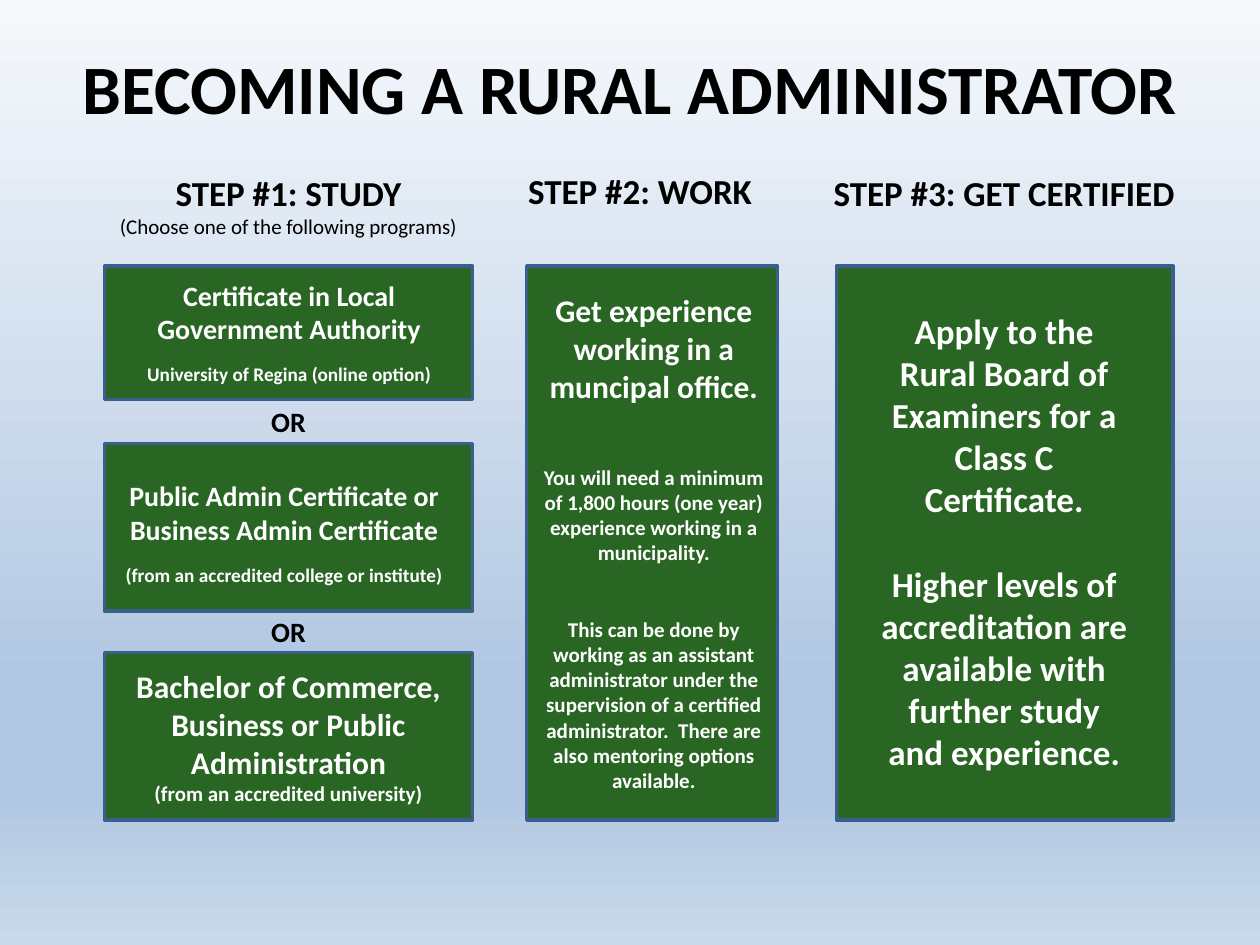
from lxml import etree
from pptx import Presentation
from pptx.dml.color import RGBColor
from pptx.enum.shapes import MSO_SHAPE
from pptx.enum.text import MSO_ANCHOR, PP_ALIGN
from pptx.oxml.ns import qn
from pptx.util import Inches, Pt

RECTANGLE = MSO_SHAPE.RECTANGLE
MIDDLE, TOP = MSO_ANCHOR.MIDDLE, MSO_ANCHOR.TOP
CENTER = PP_ALIGN.CENTER
BLACK, WHITE, GREEN, BLUE = "000000", "FFFFFF", "296624", "3A5F8C"
BACKGROUND_STOPS = [(0, "F6F9FC"), (74, "B0C6E1"), (83, "B0C6E1"), (100, "CAD9EB")]
HEADING_WIDTH = 2.92


def color(hex_string):
    """Turn a hex string into a colour."""
    return RGBColor.from_string(hex_string)


def write(frame, lines, ink, anchor=TOP, wrap=True):
    """Fill a text frame with (text, size, space before, bold) lines."""
    frame.word_wrap = wrap
    frame.vertical_anchor = anchor
    for index, (text, size, gap, bold) in enumerate(lines):
        para = frame.add_paragraph() if index else frame.paragraphs[0]
        para.alignment = CENTER
        para.space_before = Pt(gap)
        span = para.add_run()
        span.text = text
        font_format = {"name": "Calibri", "size": Pt(size), "bold": bold}
        for name, value in font_format.items():
            setattr(span.font, name, value)
        span.font.color.rgb = color(ink)


def add_text(page, box, lines, ink, wrap=True):
    """Add a text box at left, top, width, height."""
    label = page.shapes.add_textbox(*map(Inches, box))
    write(label.text_frame, lines, ink, wrap=wrap)


def add_panel(page, box):
    """Add a green panel with a blue outline."""
    panel = page.shapes.add_shape(RECTANGLE, *map(Inches, box))
    panel.shadow.inherit = False
    panel.fill.solid()
    panel.fill.fore_color.rgb = color(GREEN)
    panel.line.color.rgb = color(BLUE)
    panel.line.width = Pt(2)
    return panel


def add_background(page):
    """Paint the vertical background gradient."""
    fill = page.background.fill
    fill.gradient()
    fill.gradient_angle = 270
    stops = page.element.find(".//" + qn("a:gsLst"))
    for stop in list(stops):
        stops.remove(stop)
    for percent, tint in BACKGROUND_STOPS:
        stop = etree.SubElement(stops, qn("a:gs"), pos=str(percent * 1000))
        etree.SubElement(stop, qn("a:srgbClr"), val=tint)


def add_title(page, box):
    """Place and format the title placeholder."""
    title = page.shapes.title
    for name, value in zip(("left", "top", "width", "height"), box):
        setattr(title, name, Inches(value))
    write(title.text_frame, [("BECOMING A RURAL ADMINISTRATOR", 39.6, 0, True)], BLACK, MIDDLE)


def add_study(page, box):
    """Add step 1: three programs separated by OR."""
    left, top, width, height = box
    add_text(page, (left, top - 0.8, HEADING_WIDTH, 0.64), [
        ("STEP #1: STUDY", 20, 0, True),
        ("(Choose one of the following programs)", 12, 0, False)], BLACK)

    add_panel(page, (left, top, width, 1.06))
    add_text(page, (left + 0.07, top + 0.05, 2.79, 0.96), [
        ("Certificate in Local Government Authority", 16, 0, True),
        ("University of Regina (online option)", 11, 9.8, True)], WHITE)

    add_panel(page, (left, top + 1.41, width, 1.33))
    add_text(page, (left + 0.03, top + 1.64, 2.79, 0.96), [
        ("Public Admin Certificate or", 16, 0, True),
        ("Business Admin Certificate", 16, 0, True),
        ("(from an accredited college or institute)", 11, 9.8, True)], WHITE)

    degree = add_panel(page, (left, top + height - 1.33, width, 1.33))
    write(degree.text_frame, [
        ("Bachelor of Commerce, Business or Public Administration", 18, 0, True),
        ("(from an accredited university)", 12, 0, True)], WHITE, MIDDLE)

    for offset in (1.05, 2.72):
        add_text(page, (left + 1.22, top + offset, 0.48, 0.37),
                 [("OR", 16, 0, True)], BLACK, wrap=False)


def add_work(page, box):
    """Add step 2: work experience."""
    left, top, width, height = box
    add_text(page, (left - 0.56, top - 0.81, HEADING_WIDTH, 0.44),
             [("STEP #2: WORK", 20, 0, True)], BLACK)
    add_panel(page, box)
    add_text(page, (left + 0.03, top + 0.15, width - 0.03, height - 0.29), [
        ("Get experience working in a muncipal office.", 18, 0, True),
        ("You will need a minimum of 1,800 hours (one year) experience "
         "working in a municipality.", 12, 34.2, True),
        ("This can be done by working as an assistant administrator under the "
         "supervision of a certified administrator.  There are also mentoring "
         "options available.", 12, 29.3, True)], WHITE)


def add_certification(page, box):
    """Add step 3: certification."""
    left, top, width, height = box
    add_text(page, (left - 0.13, top - 0.8, HEADING_WIDTH, 0.44),
             [("STEP #3: GET CERTIFIED", 20, 0, True)], BLACK)
    add_panel(page, box)
    add_text(page, (left + 0.23, top + 0.3, 2.2, height - 0.6), [
        ("Apply to the Rural Board of Examiners for a Class C Certificate.", 20, 0, True),
        ("Higher levels of accreditation are available with further study "
         "and experience.", 20, 24.4, True)], WHITE)


def main():
    """Build and save the deck."""
    deck = Presentation()
    deck.slide_width, deck.slide_height = Inches(10), Inches(7.5)
    page = deck.slides.add_slide(deck.slide_layouts.get_by_name("Title Only"))
    add_background(page)
    add_title(page, (0.5, 0.37, 9, 0.64))
    add_study(page, (0.83, 2.11, 2.92, 4.4))
    add_work(page, (4.18, 2.11, 1.99, 4.4))
    add_certification(page, (6.64, 2.11, 2.67, 4.4))
    deck.save("out.pptx")


if __name__ == "__main__":
    main()
